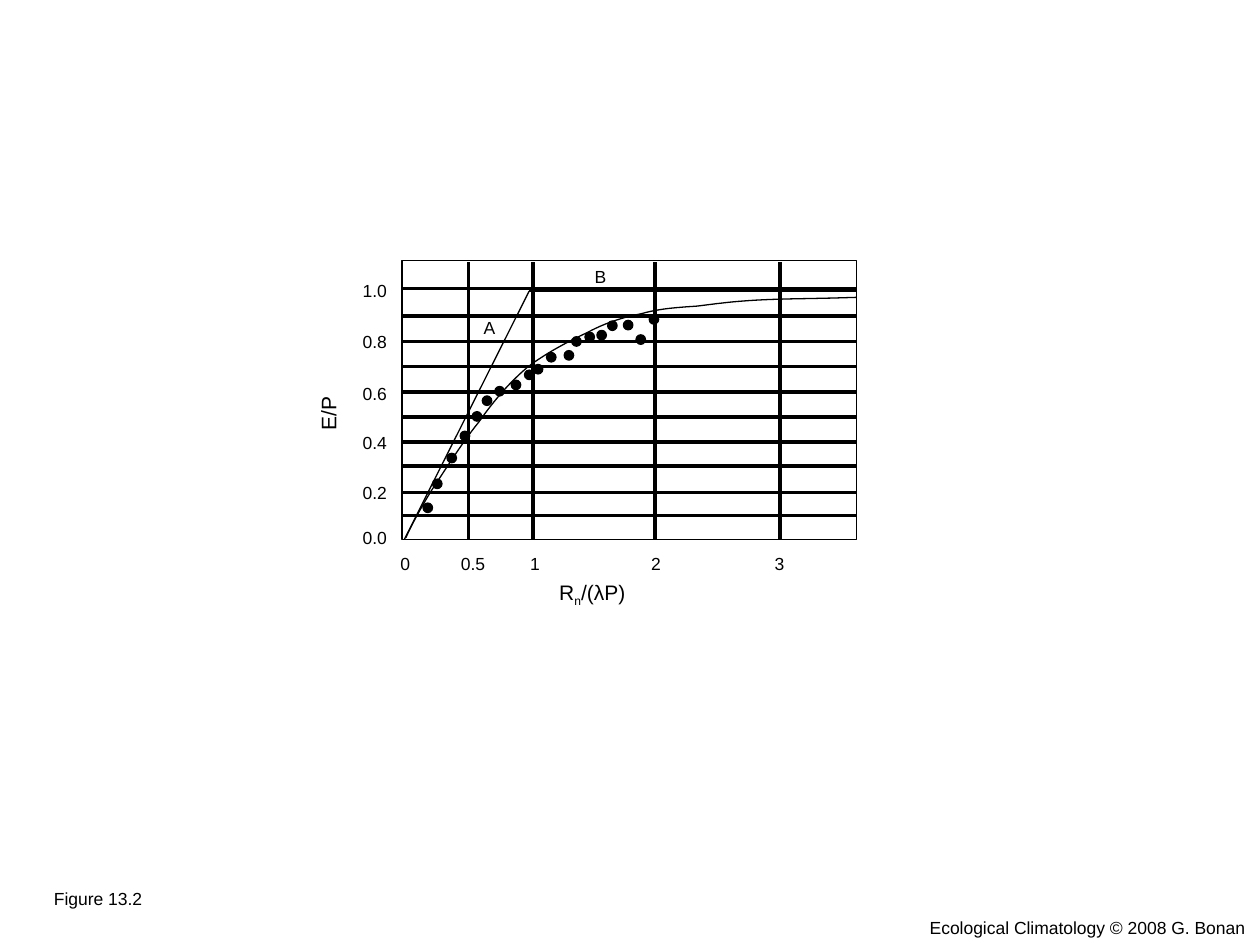
from lxml.etree import SubElement
from pptx import Presentation
from pptx.dml.color import RGBColor
from pptx.enum.shapes import MSO_CONNECTOR, MSO_SHAPE
from pptx.enum.text import MSO_AUTO_SIZE
from pptx.oxml.ns import qn
from pptx.util import Inches, Pt

BLACK = RGBColor(0, 0, 0)
COLUMNS, ROWS = 100, 75
LEFT, RIGHT, TOP, BOTTOM = 32, 68, 20.8, 42.8
GRID_X = (37.2, 42.3, 52, 61.9)
GRID_Y = (22.9, 25.1, 27.1, 29.1, 31.1, 33.1, 35.1, 37, 39.1, 40.9)
LIMITS = ((32.1, 42.8), (42, 23.1), (68, 23.1))
CURVE_START = (32.2, 42.7)
CURVE = (
    ((32.7, 41.6), (33.3, 40.5), (34.2, 39)),
    ((35.2, 37.5), (36.7, 35.1), (38, 33.5)),
    ((39.2, 31.8), (40.4, 30.4), (41.8, 29.2)),
    ((43.2, 28.1), (45.1, 27.1), (46.6, 26.4)),
    ((48.1, 25.6), (49.4, 25.2), (50.9, 24.9)),
    ((52.3, 24.5), (53.7, 24.4), (55.3, 24.3)),
    ((56.9, 24.1), (58.3, 23.9), (60.5, 23.8)),
    ((62.6, 23.7), (65.3, 23.7), (68, 23.6)),
)
POINTS = (
    (33.95, 40.3), (34.7, 38.4), (35.85, 36.35), (36.9, 34.6), (37.85, 33.05),
    (38.65, 31.8), (39.65, 31.05), (40.95, 30.55), (42, 29.75), (42.7, 29.3),
    (43.75, 28.35), (45.15, 28.2), (45.75, 27.1), (46.8, 26.75), (47.75, 26.6),
    (48.6, 25.85), (49.85, 25.8), (50.85, 26.95), (51.9, 25.35),
)
X_LABELS = (("0", 30.8, 2.8), ("0.5", 35.6, 3.9), ("1", 41.1, 2.8), ("2", 50.7, 2.8), ("3", 60.5, 2.8))
Y_LABELS = (("0.0", 41.3), ("0.2", 37.8), ("0.4", 33.8), ("0.6", 29.9), ("0.8", 25.8), ("1.0", 21.7))


def add_span(para, text, size=10, font="Arial", color=BLACK, baseline=0):
    span = para.add_run()
    span.text = text
    span.font.size, span.font.name = Pt(size), font
    span.font.color.rgb = color
    if baseline:
        span._r.get_or_add_rPr().set("baseline", str(baseline * 1000))


def bezier(start, segments, steps=12):
    points, origin = [start], start
    for first, second, end in segments:
        for step in range(1, steps + 1):
            t = step / steps
            weights = ((1 - t) ** 3, 3 * t * (1 - t) ** 2, 3 * t * t * (1 - t), t**3)
            corners = (origin, first, second, end)
            points.append(tuple(sum(w * c[axis] for w, c in zip(weights, corners)) for axis in (0, 1)))
        origin = end
    return points


class Plotter:
    """Draws styled elements on the current slide, measured in columns and rows."""

    def __init__(self, deck):
        self.deck = deck
        self.page = deck.slides.add_slide(deck.slide_layouts[6])
        self.color, self.width = BLACK, 0.75

    def x(self, columns):
        return round(self.deck.slide_width * columns / COLUMNS)

    def y(self, rows):
        return round(self.deck.slide_height * rows / ROWS)

    def finish(self, shape, filled=False):
        shape.shadow.inherit = False
        if filled:
            shape.fill.solid()
            shape.fill.fore_color.rgb = self.color
        else:
            shape.fill.background()
        shape.line.color.rgb, shape.line.width = self.color, Pt(self.width)

    def shape(self, kind, left, top, width, height, filled=False):
        shape = self.page.shapes.add_shape(kind, self.x(left), self.y(top), self.x(width), self.y(height))
        self.finish(shape, filled)

    def dot(self, center_x, center_y, size=0.75):
        self.shape(MSO_SHAPE.OVAL, center_x - size / 2, center_y - size / 2, size, size, filled=True)

    def line(self, start, end, width=0):
        line = self.page.shapes.add_connector(
            MSO_CONNECTOR.STRAIGHT, self.x(start[0]), self.y(start[1]), self.x(end[0]), self.y(end[1]))
        line.line.color.rgb, line.line.width = self.color, Pt(width)
        SubElement(line._element.spPr, qn("a:effectLst"))

    def curve(self, points):
        start, *rest = [(self.x(column), self.y(row)) for column, row in points]
        builder = self.page.shapes.build_freeform(*start)
        builder.add_line_segments(rest, close=False)
        self.finish(builder.convert_to_shape())

    def text(self, spans, left, top, width, height=2.7, size=10, rotation=0):
        box = self.page.shapes.add_textbox(self.x(left), self.y(top), self.x(width), self.y(height))
        box.rotation = rotation
        box.text_frame.word_wrap = False
        box.text_frame.auto_size = MSO_AUTO_SIZE.SHAPE_TO_FIT_TEXT
        for text, baseline in spans:
            add_span(box.text_frame.paragraphs[0], text, size=size, baseline=baseline)

    def label(self, text, *place, **style):
        self.text([(text, 0)], *place, **style)


def main():
    deck = Presentation()
    deck.slide_width, deck.slide_height = Inches(10), Inches(7.5)
    plot = Plotter(deck)

    plot.shape(MSO_SHAPE.RECTANGLE, 31.9, 20.7, 36.1, 22.1)
    for column in GRID_X:
        plot.line((column, BOTTOM), (column, TOP))
    for row in GRID_Y:
        plot.line((LEFT, row), (RIGHT, row))
    for start, end in zip(LIMITS, LIMITS[1:]):
        plot.line(start, end, width=plot.width)
    plot.curve(bezier(CURVE_START, CURVE))
    for point in POINTS:
        plot.dot(*point)

    for text, left, width in X_LABELS:
        plot.label(text, left, 43.4, width)
    for text, top in Y_LABELS:
        plot.label(text, 27.8, top, 3.9)
    plot.label("E/P", 23.7, 31.3, 4.7, 3, size=12, rotation=270)
    plot.text([("R", 0), ("n", -25), ("/(λP)", 0)], 43.4, 45.5, 7.4, 3, size=12)
    plot.label("A", 37.4, 24.7, 2.9)
    plot.label("B", 46.2, 20.6, 2.9)
    plot.label("Figure 13.2", 3.3, 70, 9)
    plot.label("Ecological Climatology © 2008 G. Bonan", 72.8, 72.3, 27.2)
    deck.save("out.pptx")


if __name__ == "__main__":
    main()
